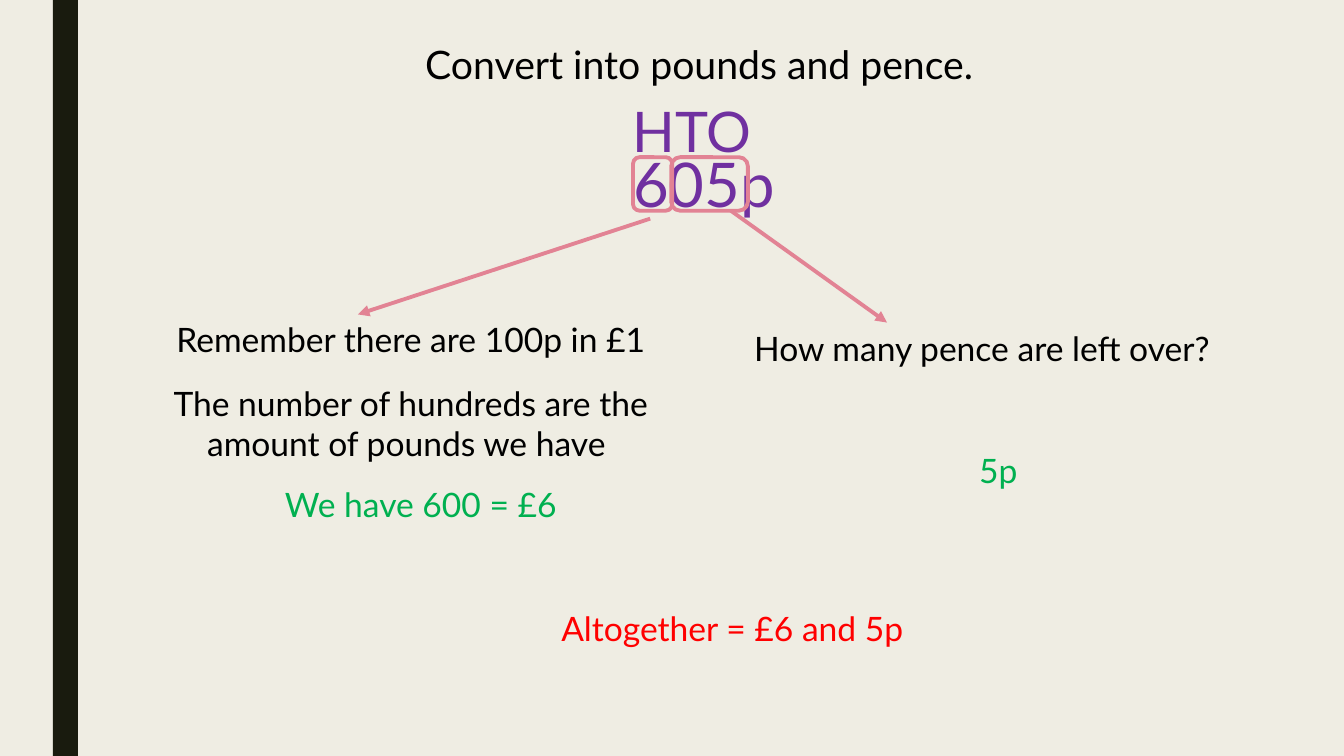
from lxml.etree import SubElement
from pptx import Presentation
from pptx.dml.color import RGBColor
from pptx.enum.shapes import MSO_CONNECTOR, MSO_SHAPE
from pptx.enum.text import MSO_ANCHOR, MSO_AUTO_SIZE, PP_ALIGN
from pptx.oxml.ns import qn
from pptx.util import Pt

HUES = {
    "paper": "EFEDE3",
    "bar": "191B0E",
    "ink": "000000",
    "digit": "7030A0",
    "mark": "E28394",
    "answer": "00B050",
    "total": "FF0000",
}
FONT = "Lato"
STROKE = 2.75
WIDE = 762.5
HALF = 357.8


def tint(name):
    return RGBColor.from_string(HUES[name])


def style(shape, text, size, hue):
    frame = shape.text_frame
    frame.text = text
    frame.word_wrap = True
    frame.auto_size = MSO_AUTO_SIZE.NONE
    frame.vertical_anchor = MSO_ANCHOR.TOP
    para = frame.paragraphs[0]
    para.alignment = PP_ALIGN.CENTER
    font = para.runs[0].font
    font.name = FONT
    font.size = Pt(size)
    font.color.rgb = tint(hue)


def add_title(slide, text, left, top, width, height):
    title = slide.shapes.title
    title.left, title.top = Pt(left), Pt(top)
    title.width, title.height = Pt(width), Pt(height)
    style(title, text, 28, "ink")


def add_text(slide, text, left, top, width, height, size=24, hue="ink"):
    box = slide.shapes.add_textbox(Pt(left), Pt(top), Pt(width), Pt(height))
    style(box, text, size, hue)


def add_bar(slide):
    bar = slide.shapes.add_shape(
        MSO_SHAPE.RECTANGLE, Pt(37.7), Pt(0), Pt(18), Pt(540))
    bar.shadow.inherit = False
    bar.fill.solid()
    bar.fill.fore_color.rgb = tint("bar")
    bar.line.fill.background()


def add_ring(slide, left, width):
    ring = slide.shapes.add_shape(
        MSO_SHAPE.ROUNDED_RECTANGLE, Pt(left), Pt(112.3), Pt(width), Pt(38.2))
    ring.shadow.inherit = False
    ring.fill.background()
    ring.line.color.rgb = tint("mark")
    ring.line.width = Pt(STROKE)


def add_arrow(slide, x1, y1, x2, y2):
    arrow = slide.shapes.add_connector(
        MSO_CONNECTOR.STRAIGHT, Pt(x1), Pt(y1), Pt(x2), Pt(y2))
    arrow.line.color.rgb = tint("mark")
    arrow.line.width = Pt(STROKE)
    SubElement(arrow.line._get_or_add_ln(), qn("a:tailEnd"), type="triangle")
    SubElement(arrow._element.spPr, qn("a:effectLst"))


def main():
    deck = Presentation()
    deck.slide_width, deck.slide_height = Pt(960), Pt(540)
    slide = deck.slides.add_slide(deck.slide_layouts[5])
    slide.background.fill.solid()
    slide.background.fill.fore_color.rgb = tint("paper")

    add_bar(slide)
    add_title(slide, "Convert into pounds and pence. ", 121.7, 25.2, WIDE, 41)
    add_text(slide, "605p", 121.7, 100.8, WIDE, 60.5, 44, "digit")
    add_text(slide, "HTO", 443.5, 65.5, 101.5, 55.4, 40, "digit")

    add_arrow(slide, 464.4, 156.2, 255.6, 224.6)
    add_text(slide, "Remember there are 100p in £1", 114.5, 224.6, HALF, 36)
    add_text(slide, "The number of hundreds are the amount of pounds we have ",
             114.5, 270, HALF, 65.5)
    add_ring(slide, 452.2, 28)
    add_text(slide, "We have 600 = £6", 121.7, 342, HALF, 36, hue="answer")

    add_arrow(slide, 522, 150.5, 633.6, 230.4)
    add_text(slide, "How many pence are left over? ", 525.6, 230.4, HALF, 36)
    add_ring(slide, 479.5, 54.7)
    add_text(slide, "5p", 534.2, 317.5, HALF, 36, hue="answer")

    add_text(slide, "Altogether = £6 and 5p", 141.8, 430.6, WIDE, 36, hue="total")
    deck.save("out.pptx")


if __name__ == "__main__":
    main()
